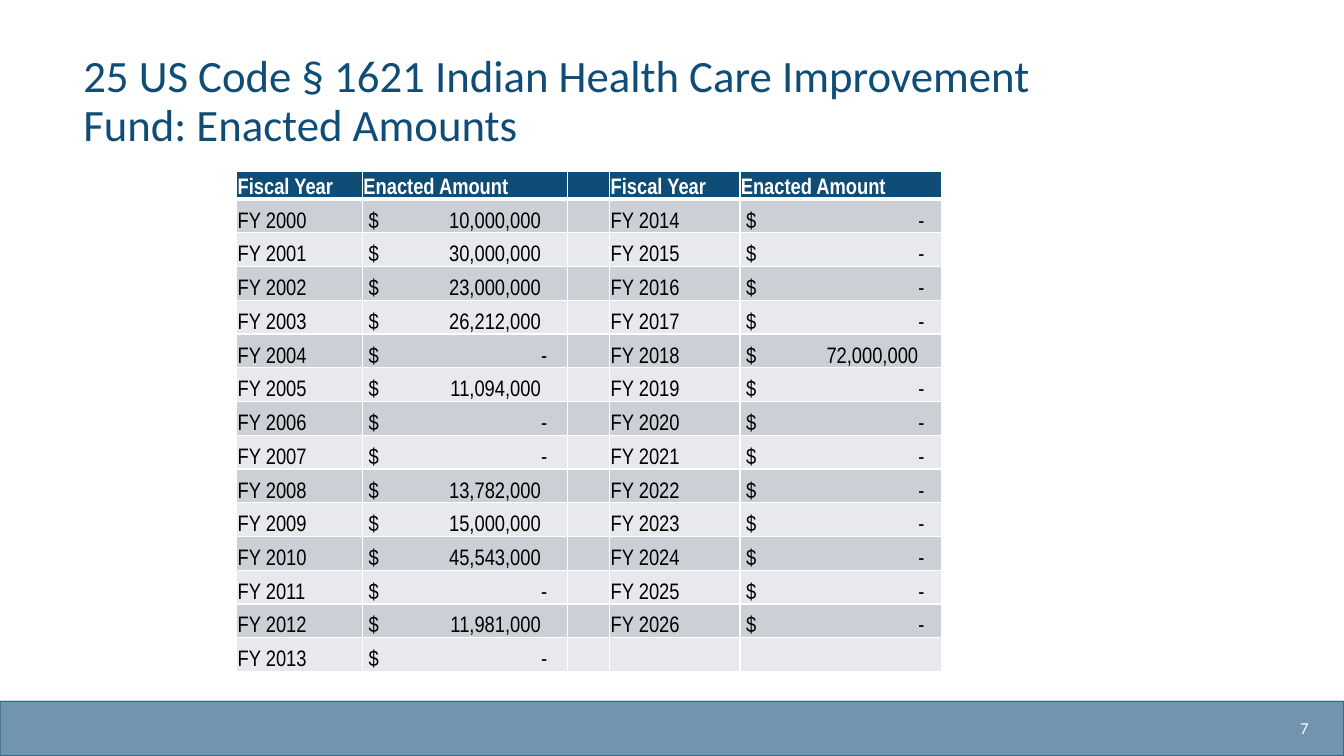
"""Build the slide listing the enacted amounts of the Indian Health Care Improvement Fund."""
from dataclasses import dataclass

from lxml import etree
from pptx import Presentation
from pptx import util as u
from pptx.dml.color import RGBColor
from pptx.enum import shapes, text
from pptx.oxml.ns import qn

NAVY, WHITE, BLACK = "0F4C76", "FFFFFF", "000000"
BANDS = ("CCD0D6", "E7E9EC")
HEADERS = ("Fiscal Year", "Enacted Amount", "", "Fiscal Year", "Enacted Amount")
COLUMN_WIDTHS = (3.17, 5.17, 1.06, 3.28, 5.08)
AMOUNT_COLUMNS = (1, 4)
FIRST_YEAR, LAST_YEAR, ROWS = 2000, 2026, 14
ROW_HEIGHT = 0.85
AMOUNTS = {
    2000: "10,000,000", 2001: "30,000,000", 2002: "23,000,000",
    2003: "26,212,000", 2005: "11,094,000", 2008: "13,782,000",
    2009: "15,000,000", 2010: "45,543,000", 2012: "11,981,000",
    2018: "72,000,000",
}


@dataclass
class Label:
    """A text box with one style; lengths in centimetres."""
    content: str
    left: float
    top: float
    width: float
    height: float
    size: float
    color: str
    align: text.PP_ALIGN = text.PP_ALIGN.LEFT
    spacing: float = 1.0


@dataclass
class CellStyle:
    """The look of one table cell."""
    fill: str
    color: str
    bold: bool = False
    bottom_line: float = 1


def rgb(color: str) -> RGBColor:
    """Turn a hex string into a colour."""
    return RGBColor.from_string(color)


def set_font(font, name: str, size: float, color: str, bold: bool = False) -> None:
    """Format a font."""
    font.name, font.size, font.bold = name, u.Pt(size), bold
    font.color.rgb = rgb(color)


def add_label(s, label: Label) -> None:
    """Draw a text box centred vertically."""
    sp = s.shapes.add_textbox(*map(u.Cm, (label.left, label.top, label.width, label.height)))
    tf = sp.text_frame
    tf.word_wrap = True
    tf.vertical_anchor = text.MSO_ANCHOR.MIDDLE
    tf.text = label.content
    p = tf.paragraphs[0]
    p.alignment, p.line_spacing = label.align, label.spacing
    set_font(p.runs[0].font, "Calibri", label.size, label.color)


def add_footer_bar(s, prs) -> None:
    """Draw the translucent bar along the bottom edge."""
    top = u.Cm(17.67)
    sp = s.shapes.add_shape(shapes.MSO_SHAPE.RECTANGLE, 0, top, prs.slide_width, prs.slide_height - top)
    sp.shadow.inherit = False
    sp.fill.solid()
    sp.fill.fore_color.rgb = rgb(NAVY)
    sp.line.color.rgb = rgb(NAVY)
    sp.line.width = u.Pt(1)
    for color in sp._element.spPr.iter(qn("a:srgbClr")):
        etree.SubElement(color, qn("a:alpha"), val="59000")


def set_borders(cell, bottom_line: float) -> None:
    """Give a cell white borders."""
    tc_pr = cell._tc.get_or_add_tcPr()
    widths = {"a:lnL": 1, "a:lnR": 1, "a:lnT": 1, "a:lnB": bottom_line}
    for i, (tag, width) in enumerate(widths.items()):
        ln = etree.Element(qn(tag), w=str(u.Pt(width)))
        fill = etree.SubElement(ln, qn("a:solidFill"))
        etree.SubElement(fill, qn("a:srgbClr"), val=WHITE)
        tc_pr.insert(i, ln)


def set_amount_tab(p, position: float) -> None:
    """Add a right tab stop that lines up the amounts."""
    tabs = etree.SubElement(p._p.get_or_add_pPr(), qn("a:tabLst"))
    etree.SubElement(tabs, qn("a:tab"), pos=str(u.Cm(position)), algn="r")


def fill_cell(cell, content: str, style: CellStyle) -> None:
    """Write and format one cell."""
    cell.fill.solid()
    cell.fill.fore_color.rgb = rgb(style.fill)
    set_borders(cell, style.bottom_line)
    cell.vertical_anchor = text.MSO_ANCHOR.BOTTOM
    cell.margin_left = u.Cm(0.15 if "\t" in content else 0.02)
    cell.margin_right = cell.margin_top = u.Cm(0.02)
    cell.margin_bottom = 0
    p = cell.text_frame.paragraphs[0]
    if not content:
        etree.SubElement(p._p, qn("a:endParaRPr"), sz="1600")
        return
    p.text = content
    if "\t" in content:
        set_amount_tab(p, 4.5 if content.endswith("-") else 4.34)
    for r in p.runs:
        set_font(r.font, "Arial Narrow", 16, style.color, style.bold)


def year_cells(year: int) -> tuple[str, str]:
    """Return the year and amount texts, empty after the last year."""
    if year > LAST_YEAR:
        return "", ""
    return f"FY {year}", f"$\t{AMOUNTS.get(year, '-')}"


def add_amounts_table(s) -> None:
    """Draw the two-part table of enacted amounts."""
    frame = s.shapes.add_table(ROWS + 1, len(HEADERS), u.Cm(5.97), u.Cm(4.32),
                               u.Cm(sum(COLUMN_WIDTHS)), u.Cm(12.6))
    table = frame.table
    for column, width in zip(table.columns, COLUMN_WIDTHS):
        column.width = u.Cm(width)
    for i, row in enumerate(table.rows):
        row.height = u.Cm(ROW_HEIGHT if i else 0)
        if i == 0:
            contents, style = HEADERS, CellStyle(NAVY, WHITE, True, 3)
        else:
            year = FIRST_YEAR + i - 1
            contents = (*year_cells(year), "", *year_cells(year + ROWS))
            style = CellStyle(BANDS[(i - 1) % 2], BLACK)
        for cell, content in zip(row.cells, contents):
            fill_cell(cell, content, style)
    frame.height = u.Cm(12.6)


def main() -> None:
    """Build and save the slide."""
    prs = Presentation()
    prs.slide_width, prs.slide_height = u.Cm(33.87), u.Cm(19.05)
    s = prs.slides.add_slide(prs.slide_layouts[6])
    add_footer_bar(s, prs)
    add_label(s, Label("7", 29.6, 17.83, 3.63, 1.01, 12, WHITE, text.PP_ALIGN.RIGHT))
    add_label(s, Label("25 US Code § 1621 Indian Health Care Improvement Fund: Enacted Amounts",
                       1.85, 1.22, 26.82, 2.72, 32, NAVY, spacing=0.9))
    add_amounts_table(s)
    prs.save("out.pptx")


if __name__ == "__main__":
    main()
